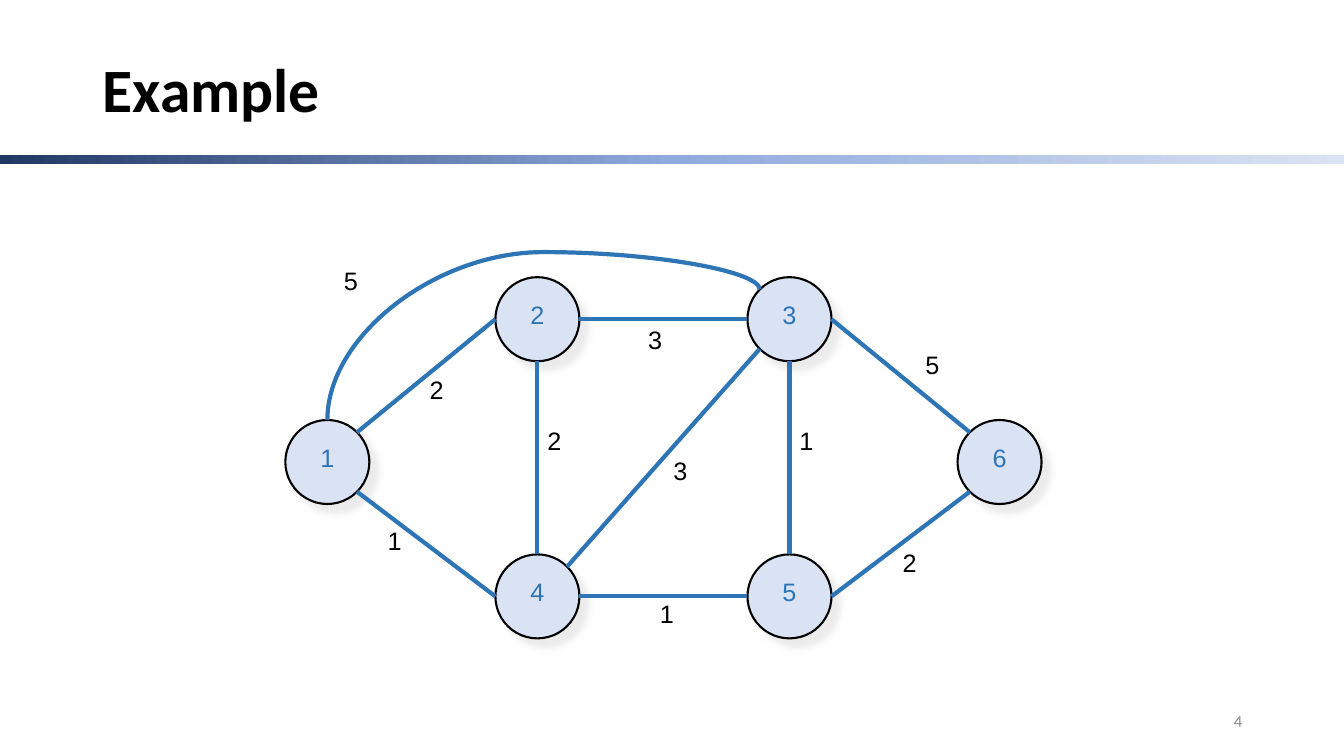
import math
from collections import namedtuple

import lxml.etree
import pptx
import pptx.dml.color
import pptx.enum.shapes
import pptx.enum.text
import pptx.oxml
import pptx.oxml.ns
import pptx.util

SHAPE = pptx.enum.shapes.MSO_SHAPE
CONNECTOR = pptx.enum.shapes.MSO_CONNECTOR
ALIGN = pptx.enum.text.PP_ALIGN
ANCHOR = pptx.enum.text.MSO_ANCHOR
inches = pptx.util.Inches
points = pptx.util.Pt
qn = pptx.oxml.ns.qn

COLORS = {
    "black": "000000", "edge": "2E75B6", "node": "DAE3F3", "shadow": "E7E6E6",
    "number": "8C8C8C", "bar start": "203864", "bar middle": "8FAADC",
    "bar end": "DAE3F3",
}

Box = namedtuple("Box", "left top width height")

# The graph lies on a grid of 90 columns by 46 rows
GRID_COLUMNS = 90
NODE_SIZE = 10
NODES = {  # name: centre column, centre row
    "1": (5, 25), "2": (30, 8), "3": (60, 8),
    "4": (30, 41), "5": (60, 41), "6": (85, 25),
}

# Directions in degrees, clockwise from the right
RIGHT, LOWER_RIGHT, DOWN, LOWER_LEFT = 0, 45, 90, 135
LEFT, UPPER_LEFT, UP, UPPER_RIGHT = 180, 225, 270, 315

EDGES = [  # node, side, node, side, weight, label column, label row
    ("1", UPPER_RIGHT, "2", LEFT, "2", 16, 14),
    ("1", LOWER_RIGHT, "4", LEFT, "1", 11, 32),
    ("3", LEFT, "2", RIGHT, "3", 42, 8),
    ("5", LEFT, "4", RIGHT, "1", 43.4, 40.6),
    ("6", LOWER_LEFT, "5", RIGHT, "2", 72.3, 34.6),
    ("3", RIGHT, "6", UPPER_LEFT, "5", 75, 11),
    ("3", LOWER_LEFT, "4", UPPER_RIGHT, "3", 45, 23.6),
    ("2", DOWN, "4", UP, "2", 30, 20),
    ("3", DOWN, "5", UP, "1", 60, 20),
    ("1", UP, "3", UPPER_LEFT, "5", 5.8, 1),
]
CURVED = {("1", "3")}
CURVE_TOP_ROW = 0


def rgb(name):
    return pptx.dml.color.RGBColor.from_string(COLORS[name])


def add_xml(parent, markup):
    namespace = pptx.oxml.ns.nsdecls("a")
    parent.append(pptx.oxml.parse_xml(markup.replace(" ", f" {namespace} ", 1)))


def write(shape, text, size, font, color, align=ALIGN.LEFT, bold=False):
    shape.text_frame.text = text
    para = shape.text_frame.paragraphs[0]
    para.alignment = align
    span = para.runs[0]
    span.font.size = points(size)
    span.font.name = font
    span.font.bold = bold
    span.font.color.rgb = rgb(color)
    return para


def set_margins(frame, top, bottom):
    frame.margin_left = frame.margin_right = inches(0.1)
    frame.margin_top, frame.margin_bottom = inches(top), inches(bottom)


def add_text_box(slide, box):
    return slide.shapes.add_textbox(*(inches(length) for length in box))


def draw_header(slide, title_box, bar_box):
    # Gradient bar
    bar = slide.shapes.add_shape(SHAPE.RECTANGLE, *(inches(v) for v in bar_box))
    bar.shadow.inherit = False
    bar.fill.gradient()
    bar.fill.gradient_angle = 0
    stops = bar._element.spPr.find(qn("a:gradFill")).find(qn("a:gsLst"))
    for stop in list(stops):
        stops.remove(stop)
    for share, name in ((0, "bar start"), (50, "bar middle"), (100, "bar end")):
        add_xml(stops, f'<a:gs pos="{share * 1000}">'
                       f'<a:srgbClr val="{COLORS[name]}"/></a:gs>')
    bar.line.fill.background()

    # Title
    title = add_text_box(slide, title_box)
    title.text_frame.word_wrap = True
    title.text_frame.vertical_anchor = ANCHOR.MIDDLE
    write(title, "Example", 44, "Calibri", "black", bold=True).line_spacing = 0.9


def draw_node(slide, name, left, top, size):
    node = slide.shapes.add_shape(SHAPE.OVAL, inches(left), inches(top),
                                  inches(size), inches(size))
    node.fill.solid()
    node.fill.fore_color.rgb = rgb("node")
    node.line.color.rgb = rgb("black")
    node.line.width = points(1.5)
    node.shadow.inherit = False
    add_xml(node._element.spPr.find(qn("a:effectLst")),
            f'<a:outerShdw blurRad="{points(5)}" dist="{points(8.5)}" '
            'dir="2700000" algn="ctr" rotWithShape="0">'
            f'<a:srgbClr val="{COLORS["shadow"]}"><a:alpha val="75000"/>'
            '</a:srgbClr></a:outerShdw>')
    frame = node.text_frame
    frame.word_wrap = False
    frame.vertical_anchor = ANCHOR.MIDDLE
    set_margins(frame, 0.15, 0.25)
    write(node, name, 18, "Arial", "edge", ALIGN.CENTER)


def draw_edge(slide, start, end, curve_top=None):
    kind = CONNECTOR.STRAIGHT
    if curve_top is not None:
        # A curve that leaves upwards is the preset turned by 270 degrees
        kind = CONNECTOR.CURVE
        bulge = (start[1] - curve_top) / (start[1] - end[1])
        middle = [(a + b) / 2 for a, b in zip(start, end)]
        half_width, half_height = (start[1] - end[1]) / 2, (end[0] - start[0]) / 2
        start = middle[0] - half_width, middle[1] - half_height
        end = middle[0] + half_width, middle[1] + half_height
    edge = slide.shapes.add_connector(kind, *(inches(v) for v in (*start, *end)))
    properties = edge._element.spPr
    if curve_top is not None:
        properties.find(qn("a:xfrm")).set("rot", str(270 * 60000))
        add_xml(properties.find(qn("a:prstGeom")).find(qn("a:avLst")),
                f'<a:gd name="adj1" fmla="val {round(bulge * 100000)}"/>')
    edge.line.color.rgb = rgb("edge")
    edge.line.width = points(3)
    lxml.etree.SubElement(properties, qn("a:effectLst"))


def draw_weight(slide, text, left, top):
    label = add_text_box(slide, Box(left, top, 0.34, 0.61))
    label.text_frame.word_wrap = False
    label.text_frame.auto_size = pptx.enum.text.MSO_AUTO_SIZE.SHAPE_TO_FIT_TEXT
    set_margins(label.text_frame, 0.05, 0.25)
    para = write(label, text, 18, "Arial", "black")
    add_xml(para._p.get_or_add_pPr(),
            '<a:spcBef ><a:spcPct val="50000"/></a:spcBef>')


def draw_graph(slide, box):
    unit = box.width / GRID_COLUMNS
    radius = NODE_SIZE / 2

    def place(column, row):
        return box.left + column * unit, box.top + row * unit

    def rim(name, side):
        column, row = NODES[name]
        angle = math.radians(side)
        return place(column + radius * math.cos(angle),
                     row + radius * math.sin(angle))

    # Nodes
    for name, (column, row) in NODES.items():
        draw_node(slide, name, *place(column - radius, row - radius),
                  NODE_SIZE * unit)

    # Edges with their weights
    curve_top = place(0, CURVE_TOP_ROW)[1]
    for first, first_side, second, second_side, weight, column, row in EDGES:
        draw_edge(slide, rim(first, first_side), rim(second, second_side),
                  curve_top if (first, second) in CURVED else None)
        draw_weight(slide, weight, *place(column, row))


def draw_page_number(slide, box):
    number = add_text_box(slide, box)
    number.text_frame.word_wrap = True
    number.text_frame.vertical_anchor = ANCHOR.MIDDLE
    write(number, "4", 12, "Calibri", "number", ALIGN.RIGHT)


def main():
    deck = pptx.Presentation()
    deck.slide_width, deck.slide_height = inches(13.33), inches(7.5)
    page = deck.slides.add_slide(deck.slide_layouts[6])
    draw_header(page, Box(0.92, 0.4, 11.5, 1.04), Box(0, 1.54, 13.33, 0.09))
    draw_graph(page, Box(2.83, 2.5, 7.5, 3.83))
    draw_page_number(page, Box(9.42, 6.95, 3, 0.4))
    deck.save("out.pptx")


if __name__ == "__main__":
    main()
